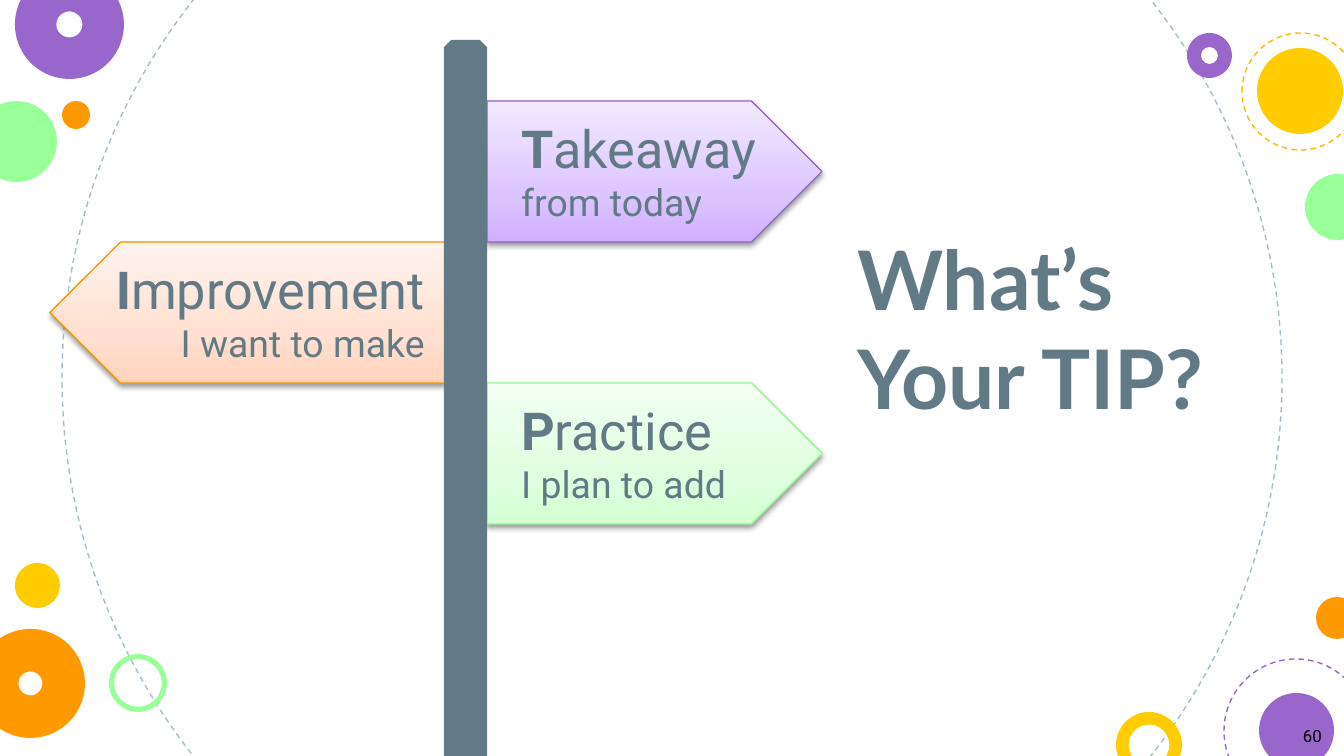
from copy import deepcopy
from typing import NamedTuple

from lxml import etree
from pptx import Presentation
from pptx import util as u
from pptx.dml.color import RGBColor
from pptx.enum import dml, shapes, text
from pptx.oxml.ns import qn

PX = 9144000 / 1344
SIGN_HEIGHT = 141
SIGN_TOP = 101
COLORS = {
    "slate": "617A86", "black": "000000", "mist": "A1BECC", "green": "99FF99",
    "yellow": "FFCC00", "purple": "9966CC", "orange": "FF9900", "amber": "F8BB00",
}
KIND = shapes.MSO_SHAPE
ALIGN = text.PP_ALIGN


class Circle(NamedTuple):
    x: int
    y: int
    size: int
    color: str
    ring: float = 0
    dashed: bool = False


class Sign(NamedTuple):
    initial: str
    rest: str
    detail: str
    x: int
    width: int
    text_x: int
    text_width: int
    gradient: tuple[str, str, str]
    edge: str
    faces_left: bool = False


CIRCLES = [
    Circle(62, -232, 1220, "mist", dashed=True),
    Circle(-24, 101, 81, "green"),
    Circle(1116, 712, 66, "yellow", 0.19),
    Circle(15, -30, 109, "purple", 0.38),
    Circle(62, 101, 28, "orange"),
    Circle(1224, 659, 144, "purple", dashed=True),
    Circle(109, 654, 58, "green", 0.09),
    Circle(1316, 597, 42, "orange"),
    Circle(-24, 629, 109, "orange", 0.39),
    Circle(1259, 693, 75, "purple"),
    Circle(1187, 33, 45, "purple", 0.31),
    Circle(1257, 48, 86, "yellow"),
    Circle(1305, 174, 66, "green"),
    Circle(1242, 33, 117, "amber", dashed=True),
    Circle(15, 563, 45, "yellow"),
]

SIGNS = [
    Sign("T", "akeaway", "from today", 487, 335, 508, 328,
         ("D0AFFF", "DDC6FF", "F2E9FF"), "9661CA"),
    Sign("I", "mprovement", "I want to make", 50, 395, 89, 349,
         ("FFD4BD", "FFE0D1", "FFF3EE"), "F99600", faces_left=True),
    Sign("P", "ractice", "I plan to add", 487, 335, 508, 328,
         ("D4FFD4", "E0FFE0", "F3FFF3"), "93FC93"),
]


def px(*lengths: int) -> list[u.Emu]:
    return [u.Emu(round(length * PX)) for length in lengths]


def rgb(name: str) -> RGBColor:
    return RGBColor.from_string(COLORS[name])


def add_shape(slide, kind, x: int, y: int, width: int, height: int):
    shape = slide.shapes.add_shape(kind, *px(x, y, width, height))
    shape.shadow.inherit = False
    return shape


def fill_solid(shape, color: str) -> None:
    shape.fill.solid()
    shape.fill.fore_color.rgb = rgb(color)
    shape.line.fill.background()


def add_circle(slide, circle: Circle) -> None:
    kind = KIND.DONUT if circle.ring else KIND.OVAL
    shape = add_shape(slide, kind, circle.x, circle.y, circle.size, circle.size)
    if circle.ring:
        shape.adjustments[0] = circle.ring
    if circle.dashed:
        shape.fill.background()
        shape.line.color.rgb = rgb(circle.color)
        shape.line.width = u.Pt(0.75)
        shape.line.dash_style = dml.MSO_LINE.DASH
    else:
        fill_solid(shape, circle.color)


def add_text_frame(slide, x: int, y: int, width: int, height: int):
    frame = slide.shapes.add_textbox(*px(x, y, width, height)).text_frame
    frame.word_wrap = True
    return frame


def style(paragraph, font: str, size: int, color: str, align=ALIGN.LEFT) -> None:
    paragraph.alignment = align
    paragraph.font.name = font
    paragraph.font.size = u.Pt(size)
    paragraph.font.color.rgb = rgb(color)


def drop_shadow(shape) -> None:
    effects = shape.element.spPr.find(qn("a:effectLst"))
    shadow = etree.SubElement(effects, qn("a:outerShdw"), blurRad="40000",
                              dist="20000", dir="5400000", rotWithShape="0")
    shade = etree.SubElement(shadow, qn("a:srgbClr"), val=COLORS["black"])
    etree.SubElement(shade, qn("a:alpha"), val="38000")


def fill_gradient(shape, colors: tuple[str, str, str]) -> None:
    shape.fill.gradient()
    shape.fill.gradient_angle = 90
    stop_list = shape.element.spPr.find(qn("a:gradFill")).find(qn("a:gsLst"))
    stop_list.append(deepcopy(stop_list[0]))
    for stop, color, position in zip(shape.fill.gradient_stops, colors, (0, 0.35, 1)):
        stop.color.rgb = RGBColor.from_string(color)
        stop.position = position


def add_sign(slide, sign: Sign, y: int) -> None:
    board = add_shape(slide, KIND.PENTAGON, sign.x, y, sign.width, SIGN_HEIGHT)
    fill_gradient(board, sign.gradient)
    board.line.color.rgb = RGBColor.from_string(sign.edge)
    board.line.width = u.Pt(0.75)
    drop_shadow(board)
    if sign.faces_left:
        board.element.spPr.find(qn("a:xfrm")).set("flipH", "1")

    frame = add_text_frame(slide, sign.text_x, y + 9, sign.text_width, 122)
    align = ALIGN.RIGHT if sign.faces_left else ALIGN.LEFT
    heading = frame.paragraphs[0]
    style(heading, "Roboto", 28, "slate", align)
    initial = heading.add_run()
    initial.text = sign.initial
    initial.font.bold = True
    heading.add_run().text = sign.rest
    detail = frame.add_paragraph()
    detail.text = sign.detail
    style(detail, "Roboto", 20, "slate", align)


def main() -> None:
    deck = Presentation()
    deck.slide_width, deck.slide_height = px(1344, 756)
    slide = deck.slides.add_slide(deck.slide_layouts[6])

    for circle in CIRCLES:
        add_circle(slide, circle)
    for row, sign in enumerate(SIGNS):
        add_sign(slide, sign, SIGN_TOP + row * SIGN_HEIGHT)

    title = add_text_frame(slide, 844, 222, 422, 198).paragraphs[0]
    title.text = "What’s Your TIP?"
    style(title, "Lato", 44, "slate")
    title.font.bold = True

    post = add_shape(slide, KIND.SNIP_2_SAME_RECTANGLE, 444, 40, 43, 716)
    fill_solid(post, "slate")

    page_frame = add_text_frame(slide, 1273, 716, 62, 40)
    page_frame.vertical_anchor = text.MSO_ANCHOR.MIDDLE
    page_number = page_frame.paragraphs[0]
    page_number.text = "60"
    style(page_number, "Roboto", 9, "black", ALIGN.RIGHT)

    deck.save("out.pptx")


if __name__ == "__main__":
    main()
